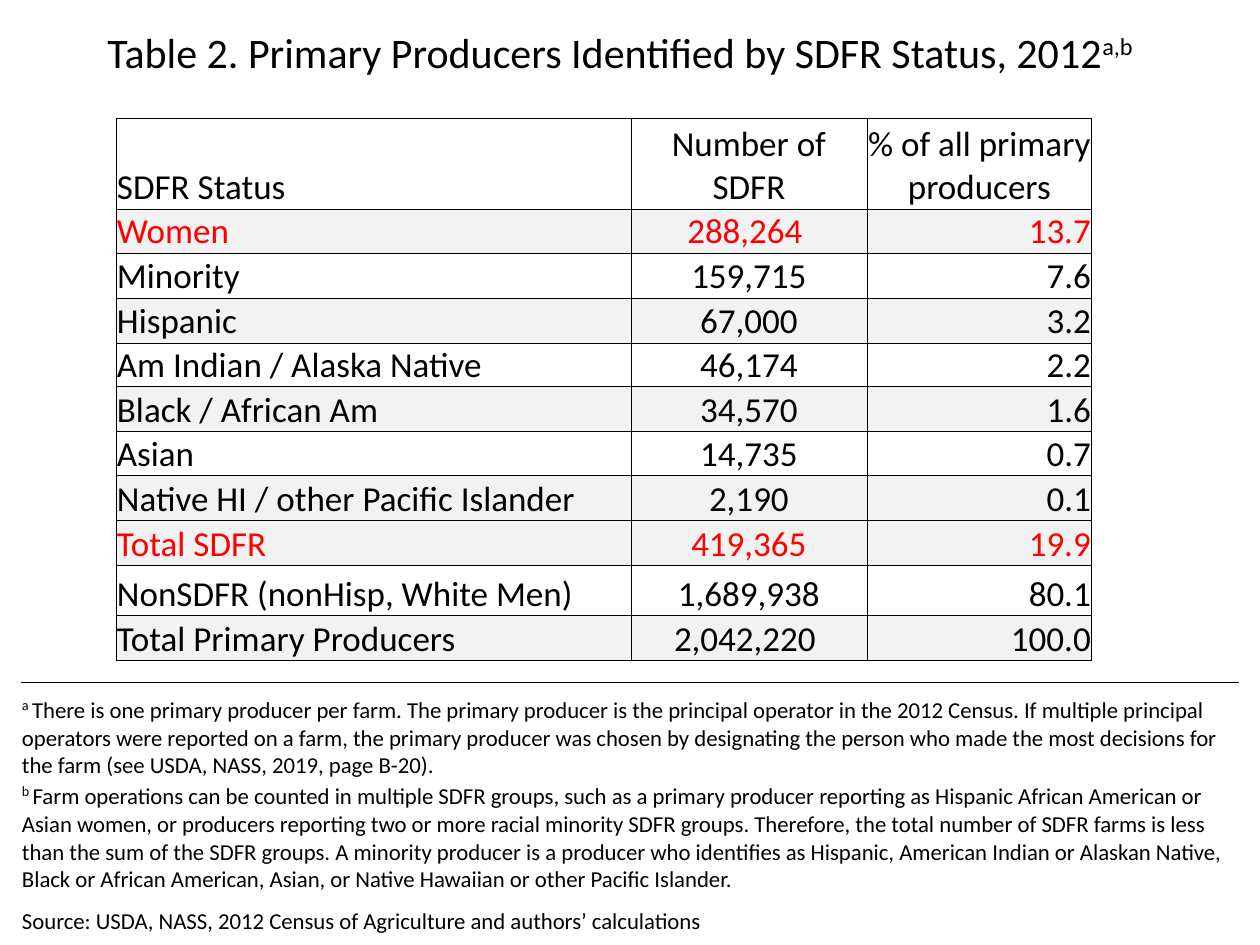
from itertools import pairwise

from lxml.etree import SubElement
from pptx import Presentation
from pptx.dml.color import RGBColor
from pptx.enum.text import MSO_ANCHOR, PP_ALIGN
from pptx.oxml.ns import qn
from pptx.util import Emu, Pt

PX = 914400 / 126
COLORS = {"text": "000000", "highlight": "FF0000", "band": "F2F2F2", "rule": "000000"}
PLAIN_STYLE = "{2D5ABB26-0587-4C30-8999-92F81FD0307C}"

STATUS_LEFT, STATUS_TOP = 116, 118
STATUS_WIDTHS = [515, 236, 225]
STATUS_ROW_EDGES = [118, 209, 253, 298, 343, 387, 432, 476, 521, 566, 616, 661]
STATUS_ALIGNMENTS = [PP_ALIGN.LEFT, PP_ALIGN.CENTER, PP_ALIGN.RIGHT]
STATUS_ROWS = [
    ("SDFR Status", "Number of SDFR", "% of all primary producers"),
    ("Women", "288,264 ", "13.7"),
    ("Minority", "159,715", "7.6"),
    ("Hispanic", "67,000", "3.2"),
    ("Am Indian / Alaska Native", "46,174", "2.2"),
    ("Black / African Am", "34,570", "1.6"),
    ("Asian", "14,735", "0.7"),
    ("Native HI / other Pacific Islander", "2,190", "0.1"),
    ("Total SDFR", "419,365", "19.9"),
    ("NonSDFR (nonHisp, White Men)", "1,689,938", "80.1"),
    ("Total Primary Producers", "2,042,220 ", "100.0"),
]
BANDED_ROWS = {1, 3, 5, 7, 8, 10}
HIGHLIGHTED_ROWS = {1, 8}

NOTE_HEIGHTS = [98, 112, 43]
NOTES = [
    ("a ", "There is one primary producer per farm. The primary producer is the "
     "principal operator in the 2012 Census. If multiple principal operators were "
     "reported on a farm, the primary producer was chosen by designating the person "
     "who made the most decisions for the farm (see USDA, NASS, 2019, page B-20)."),
    ("b ", "Farm operations can be counted in multiple SDFR groups, such as a primary "
     "producer reporting as Hispanic African American or Asian women, or producers "
     "reporting two or more racial minority SDFR groups. Therefore, the total number "
     "of SDFR farms is less than the sum of the SDFR groups. A minority producer is a "
     "producer who identifies as Hispanic, American Indian or Alaskan Native, Black or "
     "African American, Asian, or Native Hawaiian or other Pacific Islander."),
    ("", "Source: USDA, NASS, 2012 Census of Agriculture and authors’ calculations"),
]


def write(paragraph, parts, size, color="text", alignment=PP_ALIGN.LEFT):
    """Add (text, superscript size or None) parts to the paragraph."""
    paragraph.alignment = alignment
    paragraph.font.name = "Calibri"
    paragraph.font.size = Pt(size)
    paragraph.font.color.rgb = RGBColor.from_string(COLORS[color])
    for text, superscript_size in parts:
        run = paragraph.add_run()
        run.text = text
        if superscript_size:
            run.font.size = Pt(superscript_size)
            run._r.get_or_add_rPr().set("baseline", "30000")


def add_plain_table(slide, left, top, widths, heights, borders):
    """Add an unstyled table whose cells have thin lines on the given sides."""
    frame = slide.shapes.add_table(
        len(heights), len(widths),
        *(Emu(round(n * PX)) for n in (left, top, sum(widths), sum(heights))))
    table = frame.table
    table.first_row = table.horz_banding = False
    table._tbl.tblPr.find(qn("a:tableStyleId")).text = PLAIN_STYLE
    for column, width in zip(table.columns, widths):
        column.width = Emu(round(width * PX))
    for row, height in zip(table.rows, heights):
        row.height = Emu(round(height * PX))
    for cell in table.iter_cells():
        cell.margin_left = cell.margin_right = cell.margin_top = Emu(round(PX))
        cell.margin_bottom = 0
        cell.vertical_anchor = MSO_ANCHOR.BOTTOM
        for side in borders:
            line = SubElement(cell._tc.get_or_add_tcPr(), qn(f"a:ln{side}"), w=str(Pt(0.5)))
            fill = SubElement(line, qn("a:solidFill"))
            SubElement(fill, qn("a:srgbClr"), val=COLORS["rule"])
        cell.fill.background()
    return table


presentation = Presentation()
presentation.slide_width = Emu(round(1260 * PX))
presentation.slide_height = Emu(round(945 * PX))
slide = presentation.slides.add_slide(presentation.slide_layouts[6])

# Title
title = slide.shapes.add_textbox(*(Emu(round(n * PX)) for n in (95, 20, 1070, 63)))
title.text_frame.word_wrap = True
write(title.text_frame.paragraphs[0],
      [("Table 2. Primary Producers Identified by SDFR Status, 2012", None), ("a,b", 24)], 24)

# Notes, with a rule above the first one
notes_table = add_plain_table(slide, 21, 682, [1218], NOTE_HEIGHTS, [])
first_note = notes_table.cell(0, 0)._tc.get_or_add_tcPr()
rule = SubElement(first_note, qn("a:lnT"), w=str(Pt(0.5)))
SubElement(SubElement(rule, qn("a:solidFill")), qn("a:srgbClr"), val=COLORS["rule"])
first_note.insert(0, rule)
for cell, (marker, note) in zip(notes_table.iter_cells(), NOTES):
    parts = [(marker, 14), (note, None)] if marker else [(note, None)]
    write(cell.text_frame.paragraphs[0], parts, 13)

# Producers by status
status_heights = [bottom - top for top, bottom in pairwise(STATUS_ROW_EDGES)]
status_table = add_plain_table(slide, STATUS_LEFT, STATUS_TOP, STATUS_WIDTHS,
                               status_heights, "LRTB")
for row_index, values in enumerate(STATUS_ROWS):
    color = "highlight" if row_index in HIGHLIGHTED_ROWS else "text"
    for column_index, (value, alignment) in enumerate(zip(values, STATUS_ALIGNMENTS)):
        cell = status_table.cell(row_index, column_index)
        if row_index in BANDED_ROWS:
            cell.fill.solid()
            cell.fill.fore_color.rgb = RGBColor.from_string(COLORS["band"])
        if row_index == 0 and column_index > 0:
            alignment = PP_ALIGN.CENTER
        write(cell.text_frame.paragraphs[0], [(value, None)], 20, color, alignment)

presentation.save("out.pptx")
